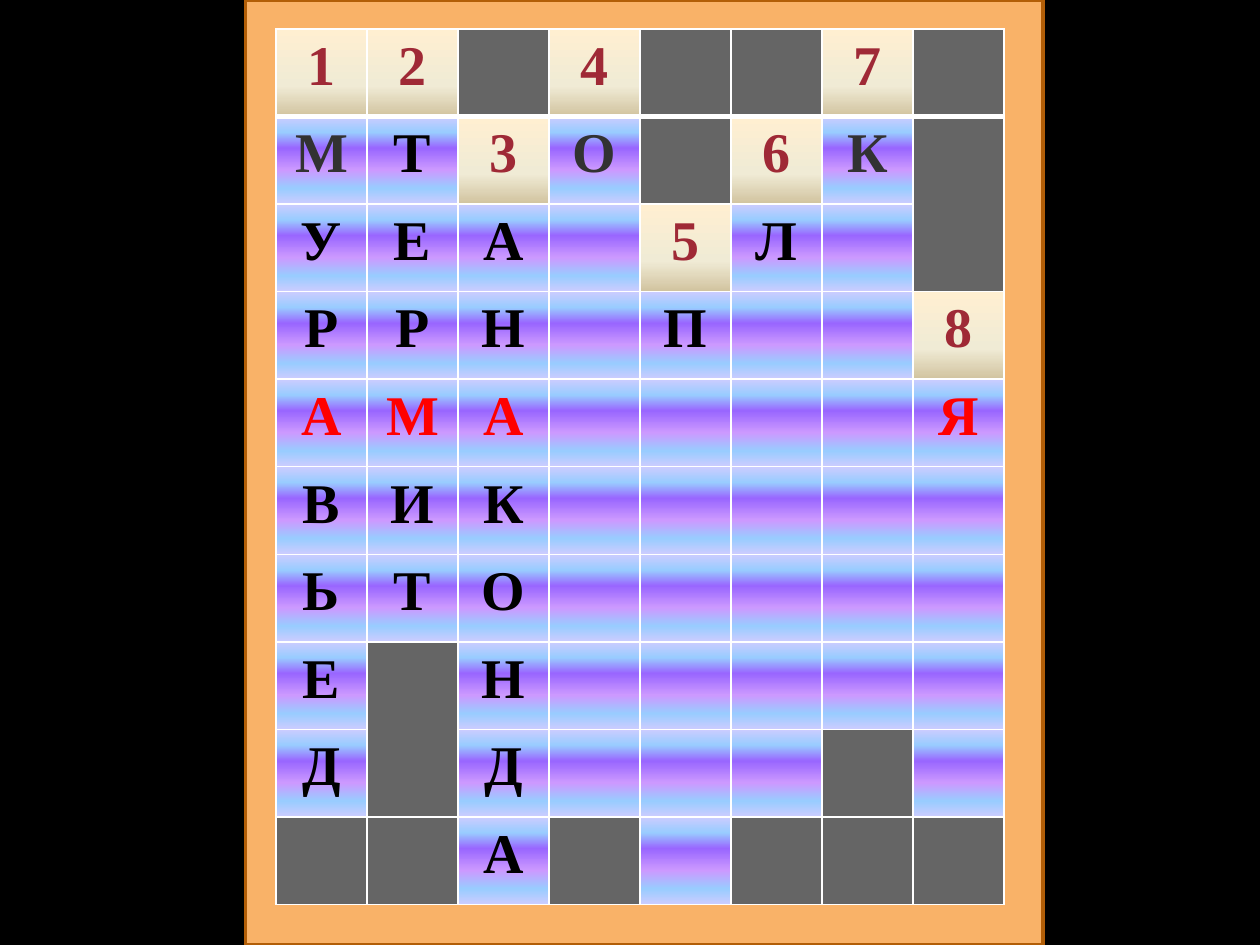
from lxml.etree import SubElement
from pptx import Presentation
from pptx.dml.color import RGBColor
from pptx.enum.shapes import MSO_SHAPE
from pptx.enum.text import PP_ALIGN
from pptx.oxml.ns import qn
from pptx.util import Inches, Pt

BLACK = RGBColor(0x00, 0x00, 0x00)
WHITE = RGBColor(0xFF, 0xFF, 0xFF)
GREY = RGBColor(0x65, 0x65, 0x65)
CHARCOAL = RGBColor(0x32, 0x32, 0x32)
RED = RGBColor(0xFF, 0x00, 0x00)
CRIMSON = RGBColor(0x9F, 0x29, 0x36)
ORANGE = RGBColor(0xF9, 0xB2, 0x68)
BROWN = RGBColor(0xB2, 0x5E, 0x07)
LILAC = RGBColor(0xCC, 0xCC, 0xFF)
SKY = RGBColor(0x99, 0xCC, 0xFF)
VIOLET = RGBColor(0x99, 0x66, 0xFF)
ORCHID = RGBColor(0xCC, 0x99, 0xFF)
CREAM = RGBColor(0xFF, 0xEF, 0xD1)
IVORY = RGBColor(0xF0, 0xEB, 0xD5)
SAND = RGBColor(0xD1, 0xC3, 0x9F)

LETTER_STOPS = [(0, LILAC), (18, SKY), (36, VIOLET), (61, ORCHID), (82, SKY), (100, LILAC)]
NUMBER_STOPS = [(0, CREAM), (65, IVORY), (100, SAND)]

BLOCKED = "#"
CROSSWORD = [
    "12#4##7#",
    "МТ3О#6К#",
    "УЕА 5Л #",
    "РРН П  8",
    "АМА    Я",
    "ВИК     ",
    "ЬТО     ",
    "Е#Н     ",
    "Д#Д   # ",
    "##А# ###",
]
TALL_BLOCKS = [(1, 7), (7, 1)]
KEYWORD_ROW = 4
OPENING_ROW = 1
OPENING_LETTERS = "МОК"


def add_solid(parent, color):
    """Append a solid fill to a drawing element."""
    solid = SubElement(parent, qn("a:solidFill"))
    SubElement(solid, qn("a:srgbClr"), val=str(color))


def set_borders(cell, top=1, bottom=1):
    """Rule all four sides of a cell in white, with widths in points."""
    properties = cell._tc.get_or_add_tcPr()
    for side, width in (("L", 1), ("R", 1), ("T", top), ("B", bottom)):
        add_solid(SubElement(properties, qn(f"a:ln{side}"), w=str(Pt(width))), WHITE)


def set_gradient(cell, stops):
    """Fill a cell from top to bottom with (percent, colour) stops."""
    gradient = SubElement(cell._tc.get_or_add_tcPr(), qn("a:gradFill"), rotWithShape="1")
    stop_list = SubElement(gradient, qn("a:gsLst"))
    for percent, color in stops:
        stop = SubElement(stop_list, qn("a:gs"), pos=str(percent * 1000))
        SubElement(stop, qn("a:srgbClr"), val=str(color))
    SubElement(gradient, qn("a:lin"), ang="5400000", scaled="0")


def write_text(frame, text, color=BLACK, size=32, bold=True, font="Times New Roman",
               align=PP_ALIGN.CENTER):
    """Write one formatted paragraph into a text frame."""
    paragraph = frame.paragraphs[0]
    paragraph.alignment = align
    run = paragraph.add_run()
    run.text = text
    run.font.name = font
    run.font.size = Pt(size)
    run.font.bold = bold
    run.font.color.rgb = color


def mark_color(mark, row):
    """Return the text colour of a crossword mark."""
    if mark.isdigit():
        return CRIMSON
    if row == KEYWORD_ROW:
        return RED
    if row == OPENING_ROW and mark in OPENING_LETTERS:
        return CHARCOAL
    return BLACK


def fill_square(cell, mark, row):
    """Format one crossword square and write its mark."""
    set_borders(cell, top=3 if row == 1 else 1, bottom=3 if row == 0 else 1)
    if mark == BLOCKED:
        cell.fill.solid()
        cell.fill.fore_color.rgb = GREY
        return
    set_gradient(cell, NUMBER_STOPS if mark.isdigit() else LETTER_STOPS)
    if mark.strip():
        write_text(cell.text_frame, mark, color=mark_color(mark, row))


def add_board(slide, left, top, width, height):
    """Draw the framed backing panel in the given box."""
    board = slide.shapes.add_shape(MSO_SHAPE.FLOWCHART_PROCESS, left, top, width, height)
    board.shadow.inherit = False
    board.fill.solid()
    board.fill.fore_color.rgb = ORANGE
    board.line.color.rgb = BROWN
    board.line.width = Pt(2)


def add_crossword(slide, left, top, width, height):
    """Lay the crossword out on an even grid in the given box."""
    row_count, column_count = len(CROSSWORD), len(CROSSWORD[0])
    grid = slide.shapes.add_table(row_count, column_count, left, top, width, height).table
    for column in grid.columns:
        column.width = width // column_count
    for row in grid.rows:
        row.height = height // row_count
    for row, marks in enumerate(CROSSWORD):
        for column, mark in enumerate(marks):
            fill_square(grid.cell(row, column), mark, row)
    for row, column in TALL_BLOCKS:
        grid.cell(row, column).merge(grid.cell(row + 1, column))


def main():
    """Build the crossword slide and save it."""
    deck = Presentation()
    deck.slide_width, deck.slide_height = Inches(10), Inches(7.5)
    slide = deck.slides.add_slide(deck.slide_layouts[6])
    slide.background.fill.solid()
    slide.background.fill.fore_color.rgb = BLACK
    add_board(slide, Inches(1.95), 0, Inches(6.33), deck.slide_height)
    add_crossword(slide, Inches(2.19), Inches(0.23), Inches(5.78), Inches(6.95))
    deck.save("out.pptx")


if __name__ == "__main__":
    main()
